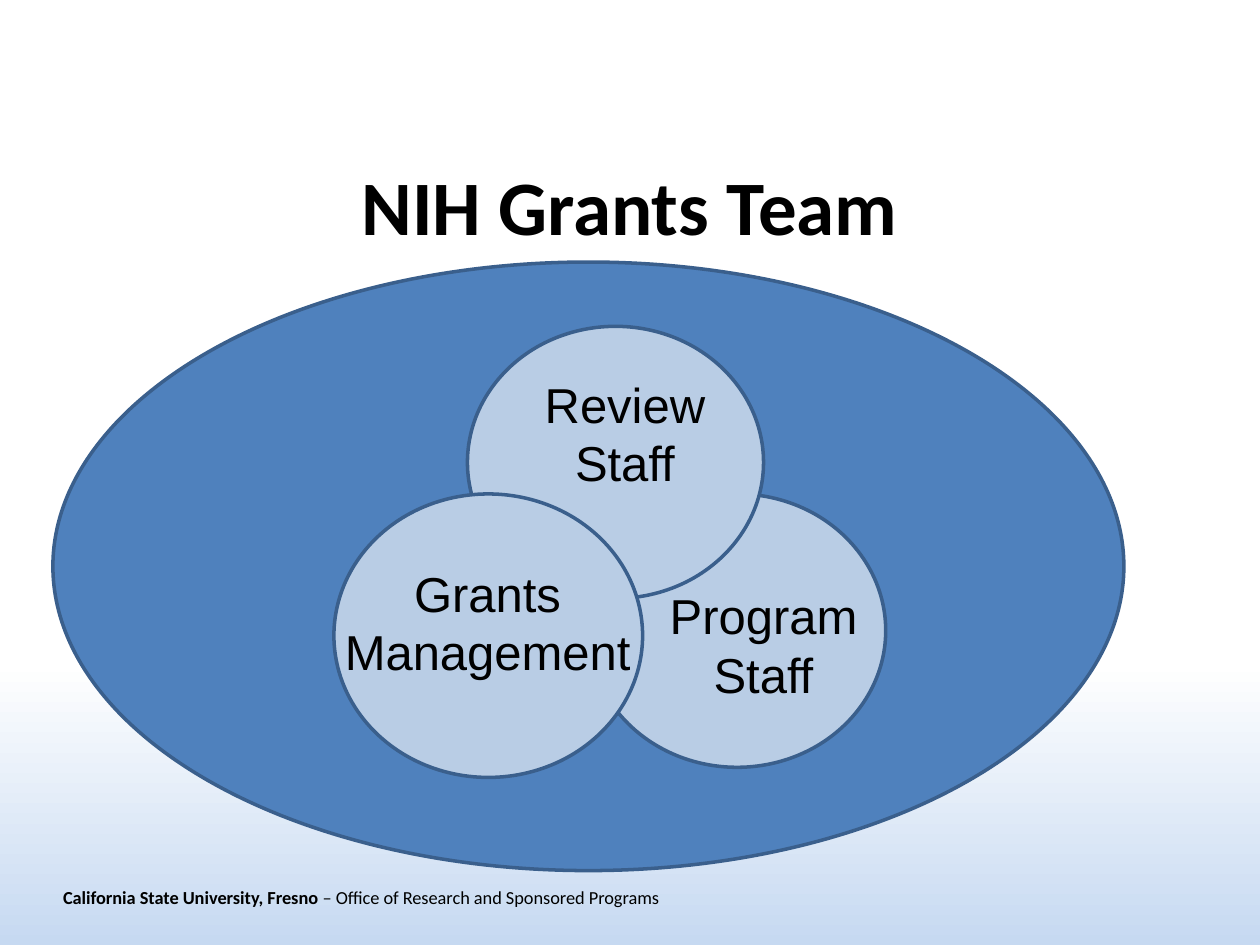
from pptx import Presentation
from pptx.dml.color import RGBColor
from pptx.enum.shapes import MSO_SHAPE as Shape
from pptx.enum.text import MSO_ANCHOR as Anchor, MSO_AUTO_SIZE as AutoSize, PP_ALIGN as Align
from pptx.util import Inches, Pt

deck = Presentation()
deck.slide_width, deck.slide_height = Inches(10), Inches(7.5)
COLUMN, ROW = deck.slide_width / 100, deck.slide_height / 75


def colour(code):
    return RGBColor.from_string(code)


def area(left, top, width, height):
    """Turn columns and rows of the 100 by 75 grid into slide lengths."""
    return int(left * COLUMN), int(top * ROW), int(width * COLUMN), int(height * ROW)


page = deck.slides.add_slide(deck.slide_layouts.get_by_name("Title Only"))
backdrop = page.background.fill
backdrop.gradient()
backdrop.gradient_angle = 270
for stop, (position, code) in zip(backdrop.gradient_stops, [(0.7, "FFFFFF"), (1, "C6D9F1")]):
    stop.position = position
    stop.color.rgb = colour(code)

# Team ellipse first, then the three overlapping staff circles
ellipses = [
    ((4.2, 20.8, 85, 48.3), "4F81BD"),
    ((46.7, 39.2, 23.6, 21.7), "B9CDE5"),
    ((37.1, 25.9, 23.5, 21.6), "B9CDE5"),
    ((26.5, 39.2, 24.5, 22.5), "B9CDE5"),
]
for place, code in ellipses:
    ellipse = page.shapes.add_shape(Shape.OVAL, *area(*place))
    ellipse.shadow.inherit = False
    ellipse.fill.solid()
    ellipse.fill.fore_color.rgb = colour(code)
    ellipse.line.color.rgb = colour("3A5F8C")
    ellipse.line.width = Pt(2)

title = page.shapes.title
title.left, title.top, title.width, title.height = area(5, 10, 90, 12.5)
footer = page.shapes.add_textbox(*area(5, 69.2, 57.5, 4))
for box in (title, footer):
    box.text_frame.margin_left = box.text_frame.margin_right = 0
    box.text_frame.vertical_anchor = Anchor.MIDDLE

# Each text: box, font, size, alignment, paragraphs of (wording, bold) runs
texts = [
    (title, "Calibri", 44, Align.CENTER, [[("NIH Grants Team", True)]]),
    (footer, "Calibri", 10.5, Align.LEFT, [[
        ("California State University, Fresno ", True),
        ("– Office of Research and Sponsored Programs", False),
    ]]),
]
labels = [
    ((40.8, 29.2, 17.6, 10.4), "Review", "Staff"),
    ((25.7, 44.2, 26, 10.4), "Grants", "Management"),
    ((48.1, 46, 25, 10.4), "Program", "Staff"),
]
for place, *words in labels:
    label = page.shapes.add_textbox(*area(*place))
    texts.append((label, "Arial", 28, Align.CENTER, [[(word, False)] for word in words]))

for box, font, size, alignment, paragraphs in texts:
    frame = box.text_frame
    frame.word_wrap = True
    frame.auto_size = AutoSize.NONE
    for number, spans in enumerate(paragraphs):
        para = frame.add_paragraph() if number else frame.paragraphs[0]
        para.alignment = alignment
        for wording, bold in spans:
            span = para.add_run()
            span.text = wording
            span.font.name = font
            span.font.size = Pt(size)
            span.font.bold = bold
            span.font.color.rgb = colour("000000")

deck.save("out.pptx")
